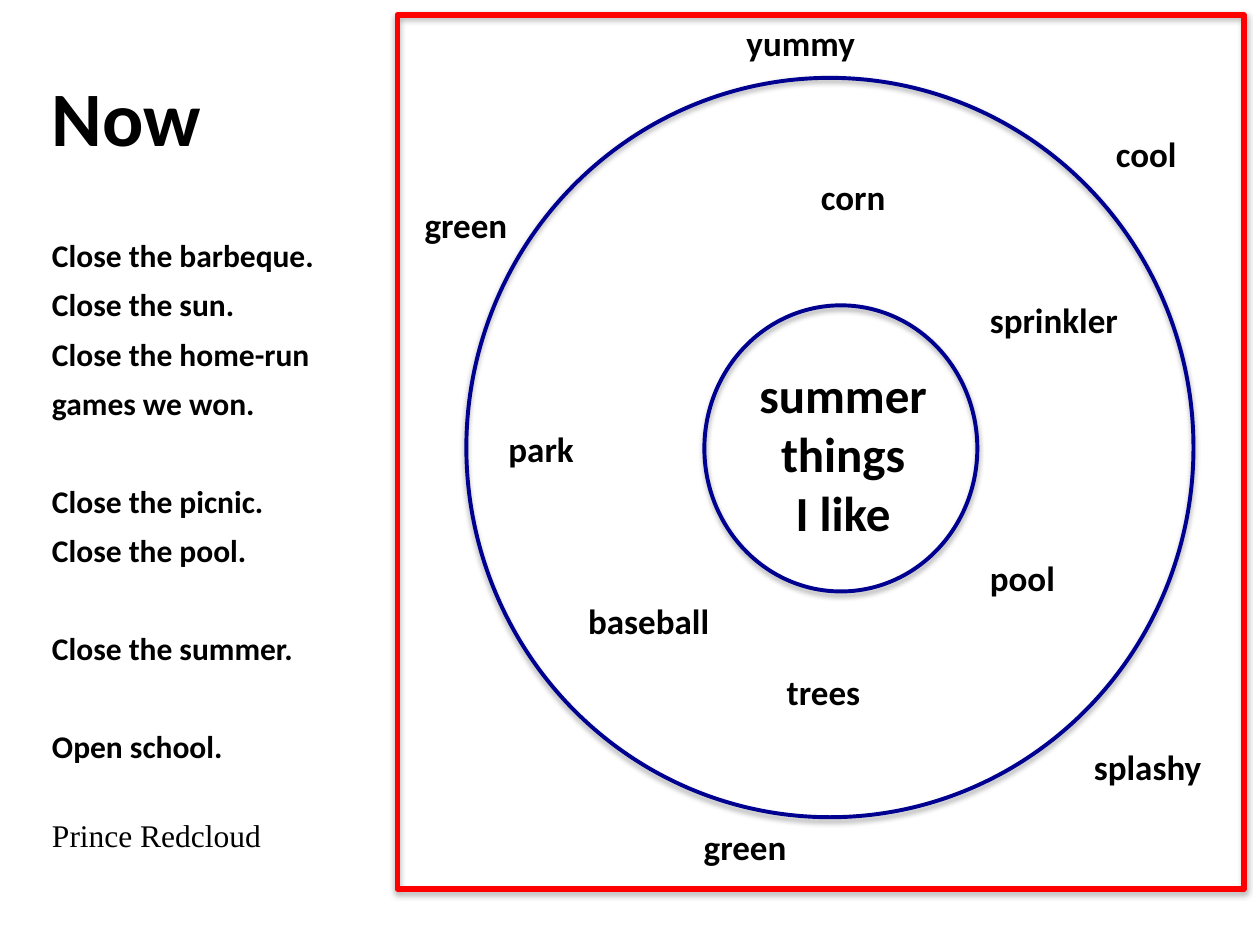
from lxml.etree import SubElement
from pptx import Presentation
from pptx.dml.color import RGBColor
from pptx.enum.shapes import MSO_SHAPE as Preset
from pptx.enum.text import MSO_ANCHOR as Anchor, MSO_AUTO_SIZE as AutoSize, PP_ALIGN as Align
from pptx.oxml.ns import qn
from pptx.util import Pt

COLORS = {"text": "000000", "circle": "000090", "frame": "FF0000", "shadow": "000000"}

POEM = [
    ("Close the barbeque.", 0),
    ("Close the sun.", 0),
    ("Close the home-run", 0),
    ("games we won.", 0),
    ("Close the picnic.", 28),
    ("Close the pool.", 0),
    ("Close the summer.", 28),
    ("Open school.", 28),
]

WORDS = [
    ("park", 283.5, 240.5, 64),
    ("trees", 442.5, 379.5, 67),
    ("pool", 558.5, 314.5, 60),
    ("corn", 462, 96.5, 61),
    ("baseball", 329, 339, 98),
    ("sprinkler", 558.5, 167, 107),
    ("green", 395, 468, 73),
    ("splashy", 618, 422.5, 89),
    ("cool", 630.5, 72, 57),
    ("yummy", 419.5, 8.5, 92),
    ("green", 235.5, 112.5, 73),
]


def place(shape, left, top, width, height):
    shape.left, shape.top = Pt(left), Pt(top)
    shape.width, shape.height = Pt(width), Pt(height)


def prepare_frame(shape):
    frame = shape.text_frame
    frame.word_wrap = True
    frame.auto_size = AutoSize.NONE
    frame.vertical_anchor = Anchor.TOP
    return frame


def write(para, text, size=20, bold=True, font="Calibri", align=Align.LEFT,
          before=0, spacing=1.0):
    para.alignment = align
    para.space_before = Pt(before)
    para.line_spacing = spacing
    span = para.add_run()
    span.text = text
    span.font.name = font
    span.font.size = Pt(size)
    span.font.bold = bold
    span.font.color.rgb = RGBColor.from_string(COLORS["text"])


def next_para(frame, index):
    return frame.paragraphs[0] if index == 0 else frame.add_paragraph()


def remove_bullet(para):
    properties = para._p.get_or_add_pPr()
    properties.set("marL", "0")
    properties.set("indent", "0")
    SubElement(properties, qn("a:buNone"))


def add_shadow(shape):
    shape.shadow.inherit = False
    effects = shape._element.spPr.find(qn("a:effectLst"))
    shadow = SubElement(effects, qn("a:outerShdw"), blurRad=str(Pt(3.1)),
                        dist=str(Pt(1.8)), dir="5400000", rotWithShape="0")
    color = SubElement(shadow, qn("a:srgbClr"), val=COLORS["shadow"])
    SubElement(color, qn("a:alpha"), val="35000")


def add_outline(page, preset, color, weight, *position):
    shape = page.shapes.add_shape(preset, *map(Pt, position))
    shape.fill.background()
    shape.line.color.rgb = RGBColor.from_string(COLORS[color])
    shape.line.width = Pt(weight)
    add_shadow(shape)


def add_label(page, lines, left, top, width, height, **style):
    box = page.shapes.add_textbox(Pt(left), Pt(top), Pt(width), Pt(height))
    frame = prepare_frame(box)
    for index, line in enumerate(lines):
        write(next_para(frame, index), line, **style)


def add_poem(page):
    title, body = page.placeholders
    place(title, 22.5, 36, 200, 64)
    write(prepare_frame(title).paragraphs[0], "Now", size=44)

    place(body, 22.5, 125, 200, 363)
    frame = prepare_frame(body)
    for index, (line, before) in enumerate(POEM):
        para = next_para(frame, index)
        write(para, line, size=18, before=before, spacing=1.3)
        remove_bullet(para)
    author = frame.add_paragraph()
    write(author, "Prince Redcloud", size=18, bold=False, font="Times New Roman", before=29)
    remove_bullet(author)


def main():
    deck = Presentation()
    deck.slide_width, deck.slide_height = Pt(720), Pt(540)
    page = deck.slides.add_slide(deck.slide_layouts[1])

    add_poem(page)
    add_outline(page, Preset.OVAL, "circle", 2.25, 402.5, 174.5, 156, 163.5)
    add_outline(page, Preset.OVAL, "circle", 2.25, 266.5, 44.5, 415.5, 422.5)
    add_label(page, ["summer", "things", "I like"], 414.5, 205, 134.5, 109,
              size=28, align=Align.CENTER)
    for word, left, top, width in WORDS:
        add_label(page, [word], left, top, width, 31.5)
    add_outline(page, Preset.RECTANGLE, "frame", 3, 227, 8.5, 484, 499.5)

    deck.save("out.pptx")


if __name__ == "__main__":
    main()
